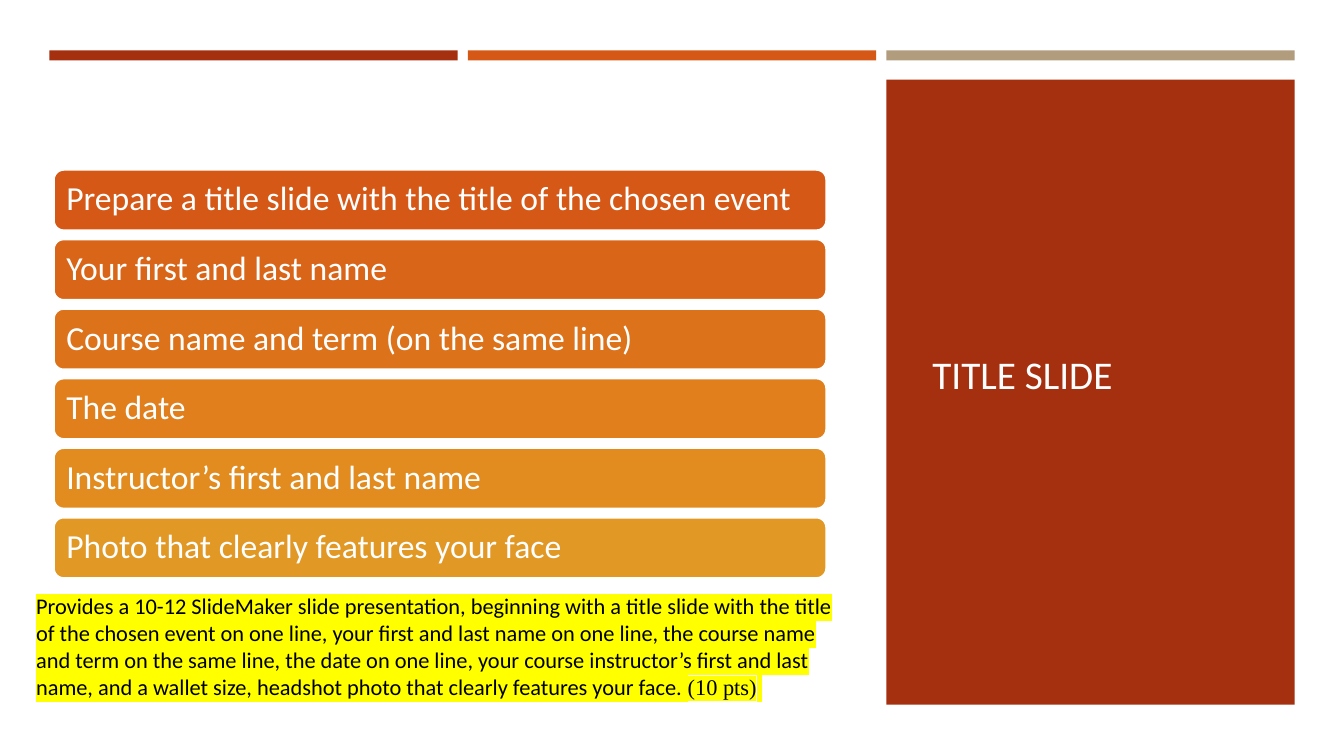
from lxml import etree
from pptx import Presentation
from pptx import util as u
from pptx.dml.color import RGBColor
from pptx.enum import shapes, text
from pptx.oxml import ns

PX = 9144
WHITE = RGBColor(0xFF, 0xFF, 0xFF)
OFF_WHITE = RGBColor(0xFF, 0xFE, 0xFF)
BLACK = RGBColor(0, 0, 0)
RUST = RGBColor(0xA5, 0x30, 0x0F)
ORANGE = RGBColor(0xD5, 0x58, 0x16)
TAN = RGBColor(0xB1, 0x9C, 0x7D)
BAR_COLORS = [RUST, ORANGE, TAN]
SANS = "Calibri"
SERIF = "Times New Roman"

STEPS = [
    ("Prepare a title slide with the title of the chosen event", ORANGE),
    ("Your first and last name", RGBColor(0xD9, 0x65, 0x18)),
    ("Course name and term (on the same line)", RGBColor(0xDC, 0x72, 0x1A)),
    ("The date", RGBColor(0xE0, 0x7F, 0x1C)),
    ("Instructor’s first and last name", RGBColor(0xE2, 0x8C, 0x1F)),
    ("Photo that clearly features your face", RGBColor(0xE1, 0x98, 0x25)),
]
NOTE_RUNS = [
    ("Provides a 10-12 SlideMaker slide presentation, beginning with a title "
     "slide with the title of the chosen event on one line, your first and last "
     "name on one line, the course name and term on the same line, the date on "
     "one line, your course instructor’s first and last name, and a wallet size, "
     "headshot photo that clearly features your face. ", SANS),
    ("(10 pts)", SERIF),
    (" ", SANS),
]


def px(*lengths):
    return [u.Emu(n * PX) for n in lengths]


def add_block(s, kind, box, fill):
    sp = s.shapes.add_shape(kind, *px(*box))
    sp.shadow.inherit = False
    sp.fill.solid()
    sp.fill.fore_color.rgb = fill
    sp.line.fill.background()
    return sp


def add_text_box(s, box, anchor):
    tf = s.shapes.add_textbox(*px(*box)).text_frame
    tf.word_wrap = True
    tf.vertical_anchor = anchor
    return tf


def add_run(p, words, size, color, font=SANS):
    r = p.add_run()
    r.text = words
    r.font.size = u.Pt(size)
    r.font.name = font
    r.font.color.rgb = color
    return r


def highlight(r):
    mark = etree.Element(ns.qn("a:highlight"))
    etree.SubElement(mark, ns.qn("a:srgbClr"), val="FFFF00")
    r.font._element.find(ns.qn("a:solidFill")).addnext(mark)


def add_top_bars(s, x, y, w, h):
    gap = 10
    bar_w = (w - 2 * gap) // 3
    for i, color in enumerate(BAR_COLORS):
        box = (x + i * (bar_w + gap), y, bar_w, h)
        add_block(s, shapes.MSO_SHAPE.RECTANGLE, box, color)


def add_title_panel(s, x, y, w, h):
    add_block(s, shapes.MSO_SHAPE.RECTANGLE, (x, y, w, h), RUST)
    tf = add_text_box(s, (x + 36, y + 34, w - 71, h - 105),
                      text.MSO_ANCHOR.MIDDLE)
    add_run(tf.paragraphs[0], "TITLE SLIDE", 28, OFF_WHITE)


def add_steps(s, x, y, w, h):
    gap = 8
    row_h = (h + gap) // len(STEPS) - gap
    for i, (words, color) in enumerate(STEPS):
        box = (x, y + i * (row_h + gap), w, row_h)
        sp = add_block(s, shapes.MSO_SHAPE.ROUNDED_RECTANGLE, box, color)
        sp.line.color.rgb = WHITE
        sp.line.width = u.Pt(2)
        tf = sp.text_frame
        tf.word_wrap = True
        tf.vertical_anchor = text.MSO_ANCHOR.MIDDLE
        tf.margin_left = tf.margin_right = u.Emu(10 * PX)
        p = tf.paragraphs[0]
        p.alignment = text.PP_ALIGN.LEFT
        p.line_spacing = 0.9
        add_run(p, words, 24, WHITE)


def add_note(s, x, y, w, h):
    tf = add_text_box(s, (x, y, w, h), text.MSO_ANCHOR.TOP)
    p = tf.paragraphs[0]
    for words, font in NOTE_RUNS:
        highlight(add_run(p, words, 16, BLACK, font))


def main():
    prs = Presentation()
    prs.slide_width, prs.slide_height = px(1333, 750)
    s = prs.slides.add_slide(prs.slide_layouts[6])
    add_top_bars(s, 49, 50, 1235, 10)
    add_title_panel(s, 879, 79, 405, 620)
    add_steps(s, 53, 168, 767, 406)
    add_note(s, 26, 583, 828, 118)
    prs.save("out.pptx")


if __name__ == "__main__":
    main()
